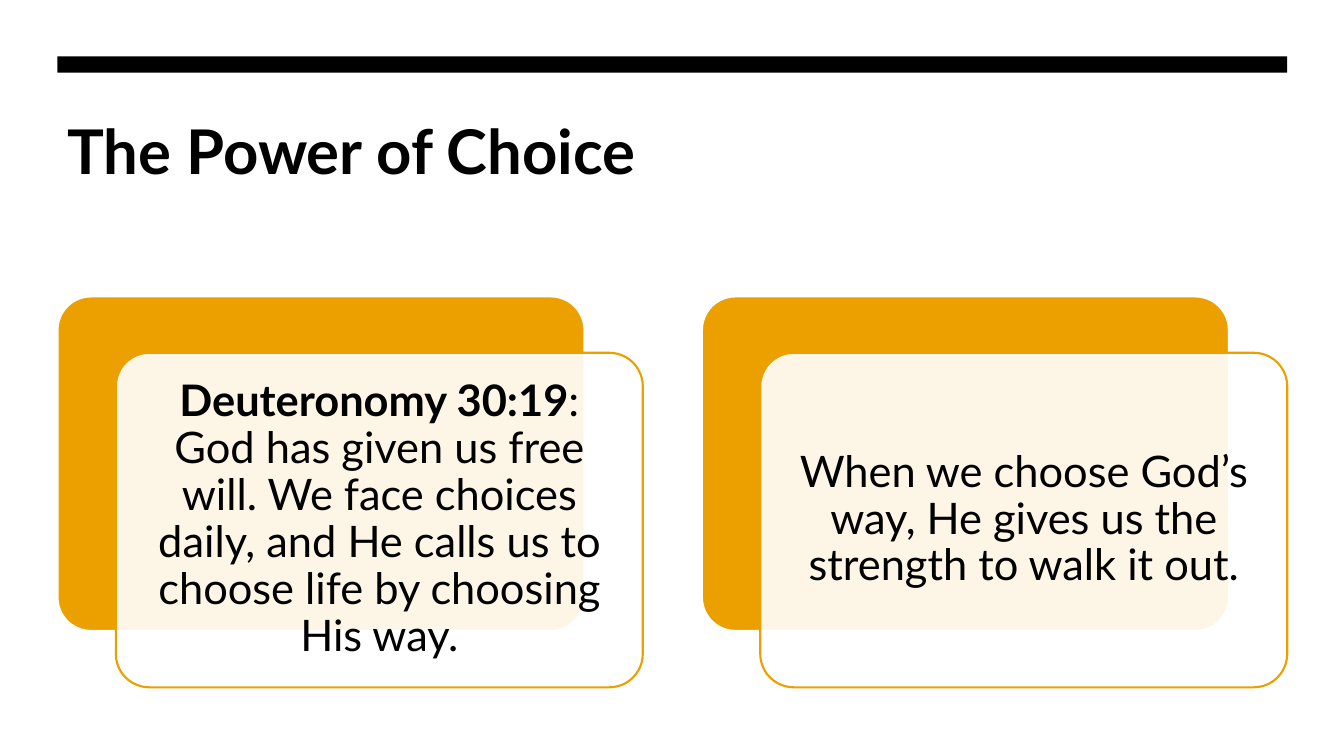
"""Build the slide "The Power of Choice" with two layered cards."""
from typing import NamedTuple

from lxml import etree
from pptx import Presentation
from pptx import util as u
from pptx.dml.color import RGBColor
from pptx.enum import shapes, text
from pptx.oxml import ns
from pptx.shapes.autoshape import Shape
from pptx.util import Cm

BLACK, WHITE, GOLD = "000000", "FFFFFF", "EBA000"
FONT = "Lato"
LEFT, WIDTH = 1.45, 30.99
CARD_TOP, CARD_W, CARD_H = 7.47, 13.28, 8.43
SHIFT_X, SHIFT_Y = 1.47, 1.42
STEP = WIDTH - CARD_W - SHIFT_X


class Card(NamedTuple):
    lead: str
    body: str


CARDS = [
    Card("Deuteronomy 30:19", ": God has given us free will. We face choices daily, "
         "and He calls us to choose life by choosing His way."),
    Card("", "When we choose God’s way, He gives us the strength to walk it out."),
]


def color(code: str) -> RGBColor:
    """Turn a hex string into a colour."""
    return RGBColor.from_string(code)


def style(para, size: float) -> None:
    """Set the font of a paragraph."""
    para.font.name = FONT
    para.font.size = u.Pt(size)
    para.font.color.rgb = color(BLACK)


def fade(shape: Shape, share: int) -> None:
    """Give a solid fill an opacity in percent."""
    tint = shape.fill._xPr.find(ns.qn("a:solidFill"))[0]
    etree.SubElement(tint, ns.qn("a:alpha"), val=str(share * 1000))


def panel(slide, x: float, y: float, fill: str, line: str) -> Shape:
    """Draw one rounded panel."""
    shape = slide.shapes.add_shape(
        shapes.MSO_SHAPE.ROUNDED_RECTANGLE, Cm(x), Cm(y), Cm(CARD_W), Cm(CARD_H))
    shape.adjustments[0] = 0.1
    shape.shadow.inherit = False
    shape.fill.solid()
    shape.fill.fore_color.rgb = color(fill)
    shape.line.color.rgb = color(line)
    shape.line.width = u.Pt(1.5)
    return shape


def draw(slide, card: Card, x: float) -> None:
    """Draw a card: a gold back panel and a pale front panel with text."""
    panel(slide, x, CARD_TOP, GOLD, WHITE)
    front = panel(slide, x + SHIFT_X, CARD_TOP + SHIFT_Y, WHITE, GOLD)
    fade(front, 90)
    frame = front.text_frame
    frame.word_wrap = True
    frame.vertical_anchor = text.MSO_ANCHOR.MIDDLE
    frame.margin_left = frame.margin_right = Cm(0.33)
    frame.margin_top = frame.margin_bottom = Cm(0.33)
    para = frame.paragraphs[0]
    para.alignment = text.PP_ALIGN.CENTER
    para.line_spacing = 0.9
    style(para, 31)
    if card.lead:
        run = para.add_run()
        run.text = card.lead
        run.font.bold = True
    para.add_run().text = card.body


def head(slide) -> None:
    """Draw the title and the bar above it."""
    box = slide.shapes.add_textbox(Cm(LEFT), Cm(2.72), Cm(WIDTH), Cm(4.06))
    box.text_frame.word_wrap = True
    para = box.text_frame.paragraphs[0]
    para.text = "The Power of Choice"
    style(para, 44)
    para.font.bold = True
    bar = slide.shapes.add_shape(
        shapes.MSO_SHAPE.RECTANGLE, Cm(LEFT), Cm(1.42), Cm(WIDTH), Cm(0.41))
    bar.shadow.inherit = False
    bar.fill.solid()
    bar.fill.fore_color.rgb = color(BLACK)
    bar.line.fill.background()


def main() -> None:
    """Build and save the deck."""
    deck = Presentation()
    deck.slide_width, deck.slide_height = Cm(33.87), Cm(19.05)
    slide = deck.slides.add_slide(deck.slide_layouts[6])
    head(slide)
    for i, card in enumerate(CARDS):
        draw(slide, card, LEFT + i * STEP)
    deck.save("out.pptx")


if __name__ == "__main__":
    main()
